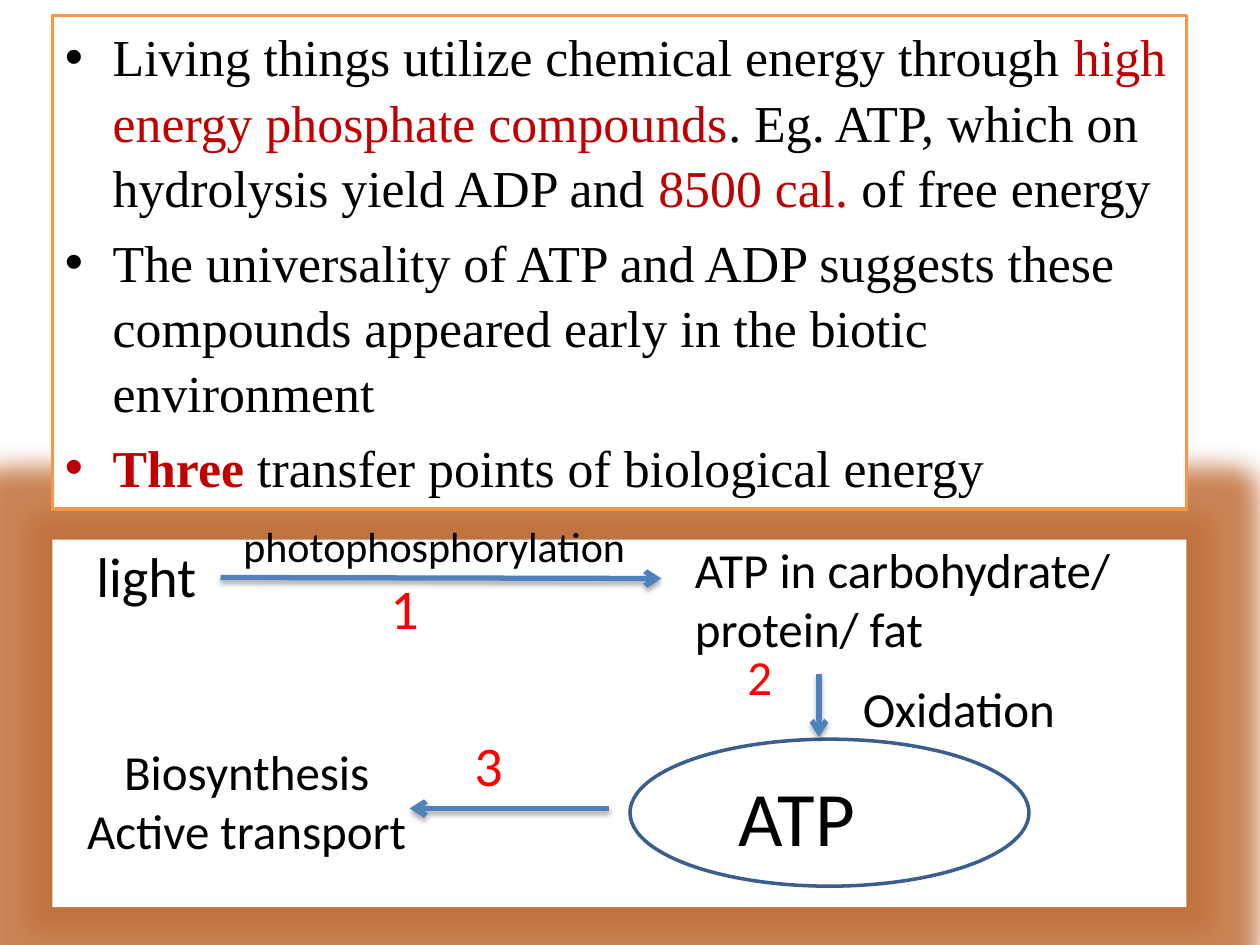
from lxml import etree
from pptx import Presentation
from pptx.dml.color import RGBColor
from pptx.enum.shapes import MSO_CONNECTOR, MSO_SHAPE
from pptx.enum.text import MSO_ANCHOR, PP_ALIGN
from pptx.oxml import parse_xml
from pptx.oxml.ns import qn
from pptx.util import Inches, Pt

RECTANGLE, OVAL = MSO_SHAPE.RECTANGLE, MSO_SHAPE.OVAL
STRAIGHT = MSO_CONNECTOR.STRAIGHT
TOP = MSO_ANCHOR.TOP
LEFT, CENTER = PP_ALIGN.LEFT, PP_ALIGN.CENTER

BLACK = RGBColor(0x00, 0x00, 0x00)
WHITE = RGBColor(0xFF, 0xFF, 0xFF)
DARK_RED = RGBColor(0xC0, 0x00, 0x00)
RED = RGBColor(0xFF, 0x00, 0x00)
ORANGE = RGBColor(0xF7, 0x96, 0x46)
BLUE = RGBColor(0x4F, 0x81, 0xBD)
NAVY = RGBColor(0x3A, 0x5F, 0x8C)

DRAWING_NS = 'xmlns:a="http://schemas.openxmlformats.org/drawingml/2006/main"'
PANEL_GLOW = (f'<a:effectLst {DRAWING_NS}><a:glow rad="355600"><a:srgbClr val="C0703A">'
              '<a:alpha val="85000"/></a:srgbClr></a:glow></a:effectLst>')
ARROW_SHADOW = (f'<a:effectLst {DRAWING_NS}><a:outerShdw blurRad="39370" dist="22860" '
                'dir="5400000" rotWithShape="0"><a:srgbClr val="000000">'
                '<a:alpha val="35000"/></a:srgbClr></a:outerShdw></a:effectLst>')

prs = Presentation()
prs.slide_width, prs.slide_height = Inches(10), Inches(7.5)
slide = prs.slides.add_slide(prs.slide_layouts[6])
CELL = prs.slide_width / 120  # grid of 120 columns by 90 rows


def grid(*cells):
    return [round(cell * CELL) for cell in cells]


def add_run(paragraph, text, font_name, size, color, bold=False):
    run = paragraph.add_run()
    run.text = text
    run.font.name, run.font.size, run.font.bold = font_name, Pt(size), bold
    run.font.color.rgb = color


# Glowing panel behind the energy diagram
panel = slide.shapes.add_shape(RECTANGLE, *grid(5, 51.4, 108, 35))
panel.fill.solid()
panel.fill.fore_color.rgb = WHITE
panel.line.fill.background()
panel._element.spPr.append(parse_xml(PANEL_GLOW))

# Bulleted statements
statements = slide.shapes.add_shape(RECTANGLE, *grid(5, 1.5, 108, 47))
statements.shadow.inherit = False
statements.fill.solid()
statements.fill.fore_color.rgb = WHITE
statements.line.color.rgb = ORANGE
statements.line.width = Pt(2)
frame = statements.text_frame
frame.word_wrap = True
frame.vertical_anchor = TOP

BULLETS = [
    [("Living things utilize chemical energy through ", BLACK, False),
     ("high energy phosphate compounds", DARK_RED, False),
     (". Eg. ATP, which on hydrolysis yield ADP and ", BLACK, False),
     ("8500 cal. ", DARK_RED, False),
     ("of free energy", BLACK, False)],
    [("The universality of ATP and ADP suggests these compounds appeared early "
      "in the biotic environment", BLACK, False)],
    [("Three", DARK_RED, True),
     (" transfer points of biological energy", BLACK, False)],
]
for index, runs in enumerate(BULLETS):
    bullet = frame.add_paragraph() if index else frame.paragraphs[0]
    bullet.alignment = LEFT
    bullet.line_spacing = 1.05
    bullet.space_before = Pt(5.5 if index else 0)
    properties = bullet._p.get_or_add_pPr()
    properties.set("marL", str(Inches(0.38)))
    properties.set("indent", str(-Inches(0.38)))
    etree.SubElement(properties, qn("a:buFont")).set("typeface", "Arial")
    etree.SubElement(properties, qn("a:buChar")).set("char", "•")
    for text, color, bold in runs:
        add_run(bullet, text, "Times New Roman", 29.6, color, bold)

# ATP pool
pool = slide.shapes.add_shape(OVAL, *grid(60, 70.4, 38, 14))
pool.shadow.inherit = False
pool.fill.background()
pool.line.color.rgb = NAVY
pool.line.width = Pt(2)

# Energy transfers: start column and row, end column and row
TRANSFERS = [(21, 55, 63, 55.1), (78, 64.2, 78, 70.2), (58, 77, 39, 77)]
for ends in TRANSFERS:
    arrow = slide.shapes.add_connector(STRAIGHT, *grid(*ends))
    arrow.line.color.rgb = BLUE
    arrow.line.width = Pt(3)
    etree.SubElement(arrow.line._get_or_add_ln(), qn("a:tailEnd")).set("type", "arrow")
    arrow._element.spPr.append(parse_xml(ARROW_SHADOW))

# Labels: column, row, columns wide, rows high, size, colour, alignment, lines
LABELS = [
    (8, 51, 12, 7.7, 32, BLACK, LEFT, ["light"]),
    (65, 50.8, 46, 12.5, 28, BLACK, LEFT, ["ATP in carbohydrate/ protein/ fat"]),
    (22, 49, 40, 6, 24, BLACK, LEFT, ["photophosphorylation"]),
    (69.2, 72.7, 18, 10, 44, BLACK, LEFT, ["ATP"]),
    (81, 64, 24, 6.8, 28, BLACK, LEFT, ["Oxidation"]),
    (5, 70, 37, 12.5, 28, BLACK, CENTER, ["Biosynthesis", "Active transport"]),
    (36, 54, 7, 7.7, 32, RED, LEFT, ["1"]),
    (70, 61, 5, 6.8, 28, RED, LEFT, ["2"]),
    (44, 69, 9, 7.7, 32, RED, LEFT, ["3"]),
]
for *box, size, color, alignment, lines in LABELS:
    label = slide.shapes.add_textbox(*grid(*box)).text_frame
    label.word_wrap = True
    for index, line in enumerate(lines):
        paragraph = label.add_paragraph() if index else label.paragraphs[0]
        paragraph.alignment = alignment
        add_run(paragraph, line, "Calibri", size, color)

prs.save("out.pptx")
